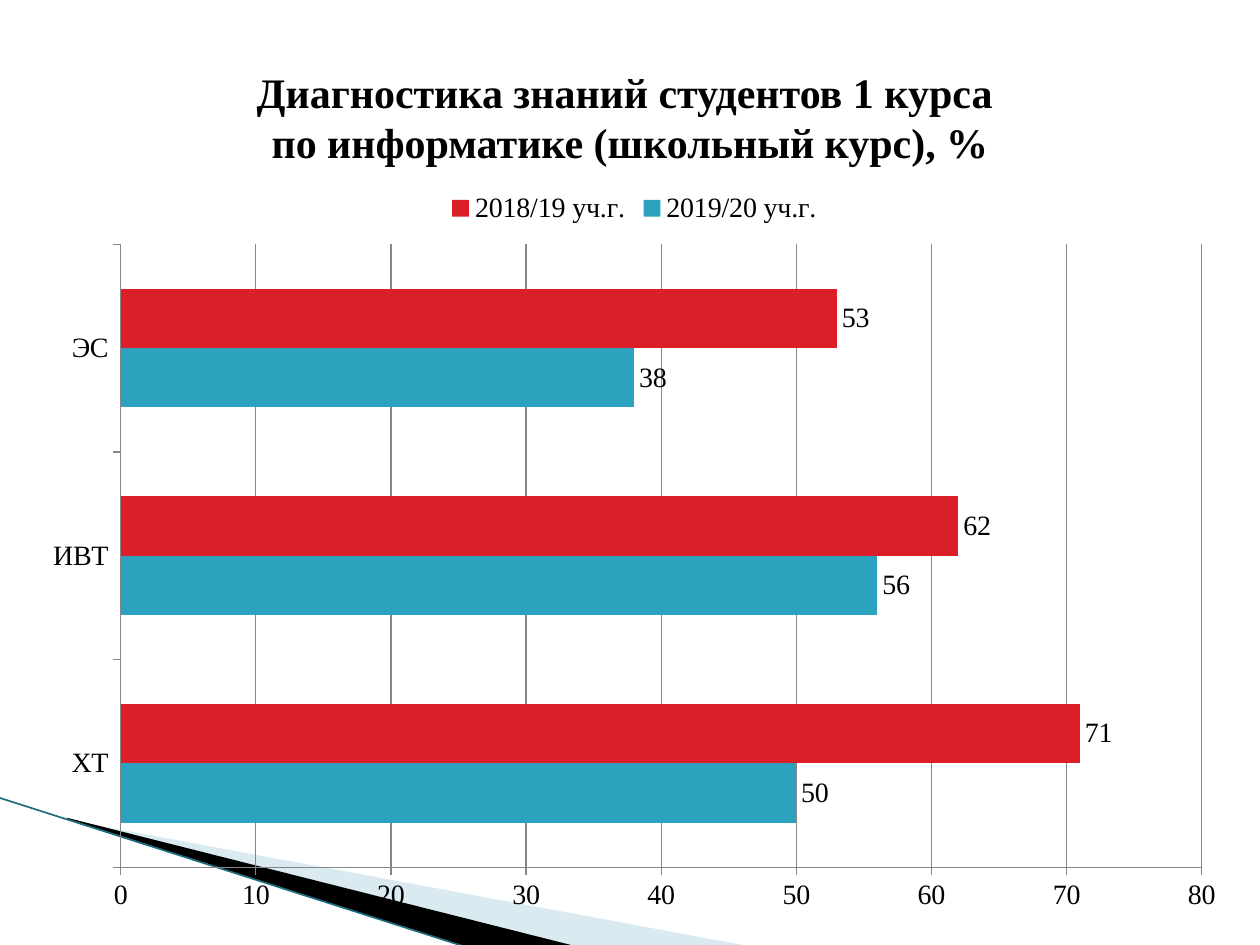
from lxml import etree
from pptx import Presentation
from pptx.chart.data import CategoryChartData
from pptx.dml.color import RGBColor
from pptx.enum.chart import XL_CHART_TYPE, XL_LABEL_POSITION, XL_LEGEND_POSITION, XL_TICK_MARK
from pptx.enum.shapes import MSO_CONNECTOR
from pptx.enum.text import MSO_ANCHOR, PP_ALIGN
from pptx.oxml.ns import qn
from pptx.util import Inches, Pt

FONT = "Times New Roman"
TITLE = "Диагностика знаний студентов 1 курса \vпо информатике (школьный курс), %"
GROUPS = ["ХТ", "ИВТ", "ЭС"]
YEARS = [
    ("2019/20 уч.г.", (50, 56, 38), "2DA2BF"),
    ("2018/19 уч.г.", (71, 62, 53), "DA1F28"),
]
# corner points in inches, fill colour, opacity in percent
WEDGES = [
    ([(0.55, 6.51), (5.95, 7.51), (4.56, 7.51), (0.55, 6.5)], "A0CBDC", 40),
    ([(0.53, 6.49), (4.57, 7.51), (3.72, 7.52), (0.54, 6.5)], "000000", 100),
]
EDGE = (-0.01, 6.33, 3.71, 7.52)
TITLE_BOX = (0.5, 0.3, 9, 1.25)
CHART_BOX = (0.23, 1.41, 9.61, 5.94)


def rgb(value):
    return RGBColor.from_string(value)


def box(values):
    return [Inches(v) for v in values]


def set_font(font, size, bold=False):
    font.name, font.size, font.bold = FONT, Pt(size), bold
    font.color.rgb = rgb("000000")


def style_line(line, color, width):
    line.color.rgb = rgb(color)
    line.width = Pt(width)


def add_wedge(slide, points, color, opacity):
    start, *rest = [box(point) for point in points]
    builder = slide.shapes.build_freeform(*start)
    builder.add_line_segments(rest, close=True)
    sp = builder.convert_to_shape()
    sp.shadow.inherit = False
    sp.line.fill.background()
    sp.fill.solid()
    sp.fill.fore_color.rgb = rgb(color)
    if opacity < 100:
        clr = sp.fill._xPr.find(qn("a:solidFill"))[0]
        etree.SubElement(clr, qn("a:alpha")).set("val", str(opacity * 1000))


def add_results_chart(slide):
    data = CategoryChartData(number_format="General")
    data.categories = GROUPS
    for name, values, _ in YEARS:
        data.add_series(name, values)
    chart = slide.shapes.add_chart(XL_CHART_TYPE.BAR_CLUSTERED, *box(CHART_BOX), data).chart
    set_font(chart.font, 16)
    chart.has_title = False
    chart.has_legend = True
    chart.legend.position = XL_LEGEND_POSITION.TOP
    chart.legend.include_in_layout = False

    plot = chart.plots[0]
    plot.gap_width, plot.overlap, plot.vary_by_categories = 150, 0, False
    for series, (_, _, color) in zip(plot.series, YEARS):
        series.format.fill.solid()
        series.format.fill.fore_color.rgb = rgb(color)
        series.data_labels.show_value = True
        series.data_labels.position = XL_LABEL_POSITION.OUTSIDE_END

    for axis in (chart.category_axis, chart.value_axis):
        axis.major_tick_mark = XL_TICK_MARK.OUTSIDE
        style_line(axis.format.line, "868686", 0.75)
    axis = chart.value_axis
    axis.minimum_scale, axis.maximum_scale, axis.major_unit = 0, 80, 10
    axis.has_major_gridlines = True
    style_line(axis.major_gridlines.format.line, "868686", 0.75)


prs = Presentation()
prs.slide_width, prs.slide_height = Inches(10), Inches(7.5)
slide = prs.slides.add_slide(prs.slide_layouts[5])

for wedge in WEDGES:
    add_wedge(slide, *wedge)
edge = slide.shapes.add_connector(MSO_CONNECTOR.STRAIGHT, *box(EDGE))
style_line(edge.line, "1B6C80", 0.95)
etree.SubElement(edge._element.spPr, qn("a:effectLst"))

title = slide.shapes.title
title.left, title.top, title.width, title.height = box(TITLE_BOX)
tf = title.text_frame
tf.text = TITLE
tf.vertical_anchor = MSO_ANCHOR.MIDDLE
p = tf.paragraphs[0]
p.alignment = PP_ALIGN.CENTER
set_font(p.font, 24, bold=True)

add_results_chart(slide)
prs.save("out.pptx")
